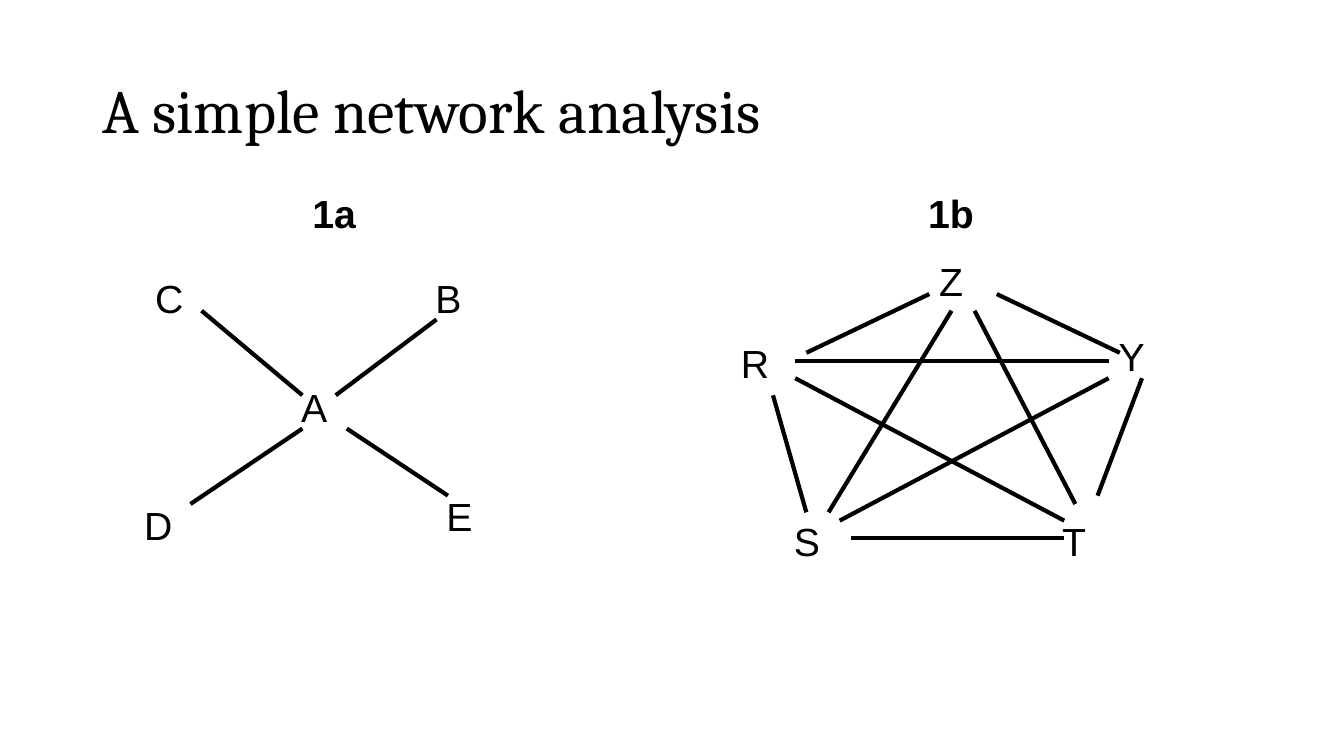
import pptx
import pptx.util
import pptx.dml.color
import pptx.enum.shapes
import pptx.enum.text
import lxml.etree
from dataclasses import dataclass

Cm = pptx.util.Cm
Pt = pptx.util.Pt


@dataclass(frozen=True)
class Theme:
    ink: pptx.dml.color.RGBColor = pptx.dml.color.RGBColor(0, 0, 0)
    serif: str = "Cambria"
    sans: str = "Arial"
    title: int = 44
    label: int = 28
    line: int = 3


THEME = Theme()

STAR = {
    "head": ("1a", 4.24, 2.54),
    "nodes": [
        ("C", 0.28, 2.13, 1.24),
        ("D", 0, 7.85, 2.54),
        ("B", 7.34, 2.13, 2.26),
        ("E", 7.62, 7.62, 1.17),
        ("A", 3.96, 4.88, 1.17),
    ],
    "ties": [
        (1.42, 8.05, 4.24, 6.15),
        (1.7, 3.18, 4.24, 5.31),
        (5.08, 5.31, 7.62, 3.4),
        (5.36, 6.15, 7.91, 7.84),
    ],
}

MESH = {
    "head": ("1b", 4.72, 3.96),
    "nodes": [
        ("R", 0, 3.78, 1.04),
        ("Z", 5, 1.7, 3.38),
        ("Y", 9.52, 3.61, 1.17),
        ("S", 1.34, 8.25, 1.17),
        ("T", 8.1, 8.25, 1.12),
    ],
    "ties": [
        (1.9, 4.24, 5, 2.76),
        (1.06, 5.31, 1.9, 8.26),
        (6.7, 2.76, 9.8, 4.24),
        (10.36, 4.88, 9.24, 7.84),
        (3.02, 8.9, 8.4, 8.9),
        (5.56, 3.18, 2.46, 8.26),
        (6.14, 3.18, 8.68, 8.05),
        (1.62, 4.88, 8.4, 8.47),
        (9.52, 4.88, 2.74, 8.47),
        (1.62, 4.45, 9.52, 4.45),
    ],
}


def add_text(slide, text, box, face, size, bold=False):
    frame = slide.shapes.add_textbox(*(Cm(n) for n in box)).text_frame
    frame.word_wrap = True
    para = frame.paragraphs[0]
    para.text = text
    font = para.font
    font.name = face
    font.size = Pt(size)
    font.bold = bold
    font.color.rgb = THEME.ink
    return frame


def add_tie(slide, ends):
    kind = pptx.enum.shapes.MSO_CONNECTOR.STRAIGHT
    tie = slide.shapes.add_connector(kind, *(Cm(n) for n in ends))
    tie.line.color.rgb = THEME.ink
    tie.line.width = Pt(THEME.line)
    props = tie._element.spPr
    lxml.etree.SubElement(props, pptx.oxml.ns.qn("a:effectLst"))


def add_title(slide, text, box):
    frame = add_text(slide, text, box, THEME.serif, THEME.title)
    frame.vertical_anchor = pptx.enum.text.MSO_ANCHOR.MIDDLE
    frame.paragraphs[0].line_spacing = 0.9


def add_graph(slide, graph, left, top):
    high = 1.45
    name, x, width = graph["head"]
    add_text(slide, name, (left + x, top, width, high),
             THEME.sans, THEME.label, True)
    for name, x, y, width in graph["nodes"]:
        add_text(slide, name, (left + x, top + y, width, high),
                 THEME.sans, THEME.label)
    for x1, y1, x2, y2 in graph["ties"]:
        add_tie(slide, (left + x1, top + y1, left + x2, top + y2))


def main():
    deck = pptx.Presentation()
    deck.slide_width = Cm(33.87)
    deck.slide_height = Cm(19.05)
    slide = deck.slides.add_slide(deck.slide_layouts[6])
    add_title(slide, "A simple network analysis", (2.33, 1.01, 29.21, 3.68))
    add_graph(slide, STAR, 3.38, 4.65)
    add_graph(slide, MESH, 18.42, 4.65)
    deck.save("out.pptx")


if __name__ == "__main__":
    main()
